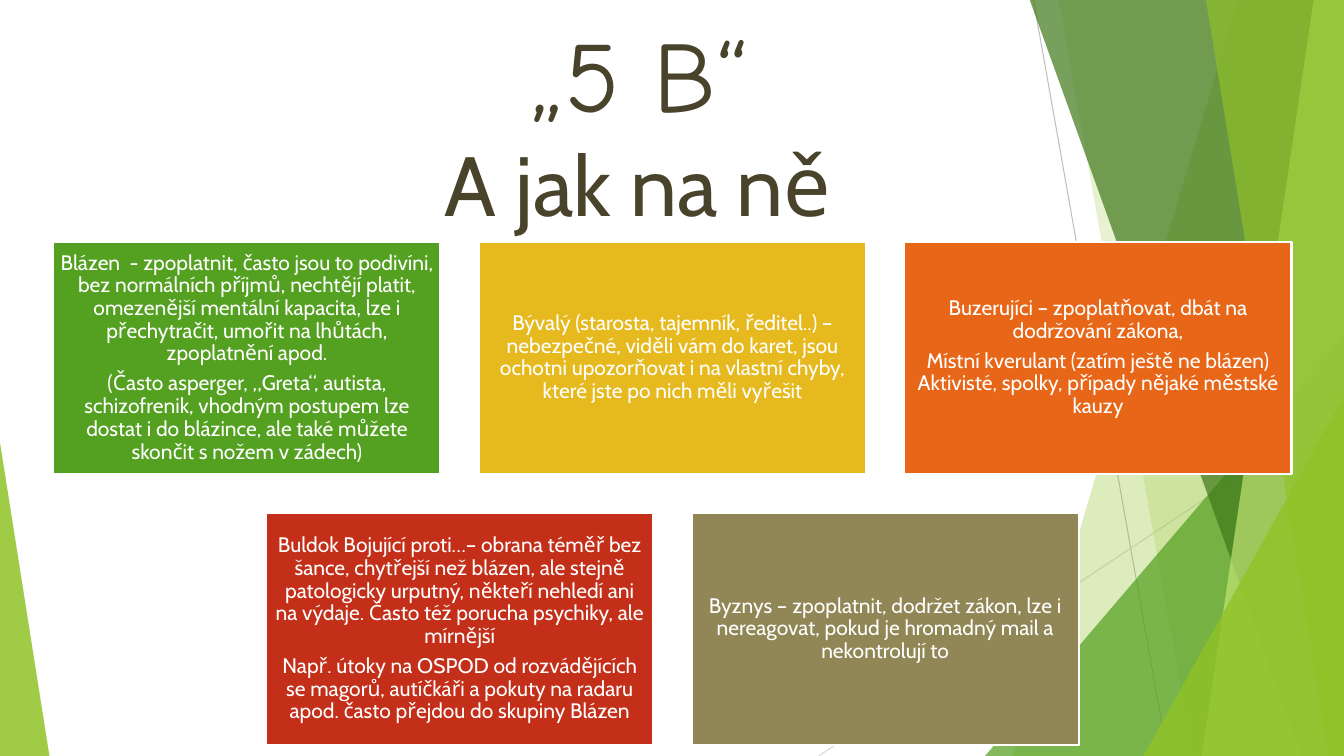
from dataclasses import dataclass

from lxml import etree
from pptx import Presentation
from pptx.dml.color import RGBColor
from pptx.enum.shapes import MSO_CONNECTOR, MSO_SHAPE
from pptx.enum.text import MSO_ANCHOR, PP_ALIGN
from pptx.oxml.ns import qn
from pptx.util import Pt

PX = 9144
SLIDE_W, SLIDE_H = 1333, 750
RECT, TRIANGLE = MSO_SHAPE.RECTANGLE, MSO_SHAPE.ISOSCELES_TRIANGLE
STRAIGHT = MSO_CONNECTOR.STRAIGHT
CENTER, MIDDLE, TOP = PP_ALIGN.CENTER, MSO_ANCHOR.MIDDLE, MSO_ANCHOR.TOP


@dataclass(frozen=True)
class Theme:
    white: str = "FFFFFF"
    title: str = "48432A"
    lime: str = "90C226"
    green: str = "54A021"
    forest: str = "3F7819"
    pale: str = "C0E474"
    yellow: str = "E6B91E"
    orange: str = "E76618"
    red: str = "C42F1A"
    olive: str = "918655"
    body_font: str = "Cabin"
    hand_font: str = "Comic Neue"
    hand_size: int = 72
    title_size: int = 60
    body_size: int = 15


THEME = Theme()


@dataclass(frozen=True)
class Ray:
    x1: int
    y1: int
    x2: int
    y2: int
    color: str


@dataclass(frozen=True)
class Band:
    top_x: int
    bottom_x: int
    color: str
    alpha: int


@dataclass(frozen=True)
class Wedge:
    x: int
    y: int
    w: int
    h: int
    apex: int
    color: str
    alpha: int


@dataclass(frozen=True)
class Card:
    color: str
    paragraphs: tuple[str, ...]


RAYS = (
    Ray(1025, 0, 1158, 750, "BFBFBF"),
    Ray(1333, 403, 812, 750, "D9D9D9"),
)
FACETS = (
    Band(1228, 1004, THEME.lime, 30),
    Band(1050, 1183, THEME.lime, 20),
    Wedge(977, 333, 356, 417, 1, THEME.green, 72),
    Band(1021, 1291, THEME.forest, 70),
    Band(1303, 1192, THEME.pale, 70),
    Band(1196, 1318, THEME.lime, 65),
    Wedge(1134, 393, 199, 357, 1, THEME.lime, 80),
    Wedge(0, 439, 49, 311, 0, THEME.lime, 85),
)
CARD_W, CARD_H = 384, 230
PITCH_X, PITCH_Y = 422, 269
GRID_X, GRID_Y = 53, 240
CARD_ROWS = (
    (
        Card(THEME.green, (
            "Blázen  - zpoplatnit, často jsou to podivíni, bez normálních příjmů, "
            "nechtějí platit, omezenější mentální kapacita, lze i přechytračit, "
            "umořit na lhůtách, zpoplatnění apod.",
            "(Často asperger, „Greta“, autista, schizofrenik, vhodným postupem lze "
            "dostat i do blázince, ale také můžete skončit s nožem v zádech)",
        )),
        Card(THEME.yellow, (
            "Bývalý (starosta, tajemník, ředitel..) – nebezpečné, viděli vám do "
            "karet, jsou ochotni upozorňovat i na vlastní chyby, které jste po "
            "nich měli vyřešit",
        )),
        Card(THEME.orange, (
            "Buzerujíci – zpoplatňovat, dbát na dodržování zákona,",
            "Místní kverulant (zatím ještě ne blázen) Aktivisté, spolky, případy "
            "nějaké městské kauzy",
        )),
    ),
    (
        Card(THEME.red, (
            "Buldok Bojující proti…– obrana téměř bez šance, chytřejší než blázen, "
            "ale stejně patologicky urputný, někteří nehledí ani na výdaje. Často "
            "též porucha psychiky, ale mírnější",
            "Např. útoky na OSPOD od rozvádějících se magorů, autíčkáři a pokuty "
            "na radaru apod. často přejdou do skupiny Blázen",
        )),
        Card(THEME.olive, (
            "Byznys – zpoplatnit, dodržet zákon, lze i nereagovat, pokud je "
            "hromadný mail a nekontrolují to",
        )),
    ),
)


def set_font(font, name: str, size: int, color: str) -> None:
    font.name, font.size = name, Pt(size)
    font.color.rgb = RGBColor.from_string(color)


def set_fill(sp, color: str) -> None:
    sp.shadow.inherit = False
    sp.fill.solid()
    sp.fill.fore_color.rgb = RGBColor.from_string(color)


def draw_ray(s, ray: Ray) -> None:
    sp = s.shapes.add_connector(
        STRAIGHT, ray.x1 * PX, ray.y1 * PX, ray.x2 * PX, ray.y2 * PX)
    sp.line.color.rgb = RGBColor.from_string(ray.color)
    sp.line.width = Pt(0.75)
    etree.SubElement(sp._element.spPr, qn("a:effectLst"))


def draw_facet(s, facet: Band | Wedge) -> None:
    if isinstance(facet, Band):
        builder = s.shapes.build_freeform(facet.top_x, -1, scale=PX)
        builder.add_line_segments(
            [(SLIDE_W, -1), (SLIDE_W, SLIDE_H), (facet.bottom_x, SLIDE_H)])
        sp = builder.convert_to_shape()
    else:
        sp = s.shapes.add_shape(
            TRIANGLE, facet.x * PX, facet.y * PX, facet.w * PX, facet.h * PX)
        sp.adjustments[0] = facet.apex
    set_fill(sp, facet.color)
    sp.line.fill.background()
    color = sp._element.spPr.find(qn("a:solidFill"))[0]
    etree.SubElement(color, qn("a:alpha"), val=str(facet.alpha * 1000))


def draw_title(s) -> None:
    sp = s.shapes.add_textbox(74 * PX, 7 * PX, 1117 * PX, 150 * PX)
    tf = sp.text_frame
    tf.word_wrap, tf.vertical_anchor = True, TOP
    p = tf.paragraphs[0]
    p.alignment = CENTER
    r = p.add_run()
    r.text = "„5 B“"
    set_font(r.font, THEME.hand_font, THEME.hand_size, THEME.title)
    p.add_line_break()
    r = p.add_run()
    r.text = "A jak na ně"
    set_font(r.font, THEME.body_font, THEME.title_size, THEME.title)


def draw_card(s, card: Card, x: int, y: int) -> None:
    sp = s.shapes.add_shape(RECT, x * PX, y * PX, CARD_W * PX, CARD_H * PX)
    set_fill(sp, card.color)
    sp.line.color.rgb = RGBColor.from_string(THEME.white)
    sp.line.width = Pt(1.5)
    tf = sp.text_frame
    tf.word_wrap, tf.vertical_anchor = True, MIDDLE
    tf.margin_left = tf.margin_right = tf.margin_top = tf.margin_bottom = 6 * PX
    for i, text in enumerate(card.paragraphs):
        p = tf.add_paragraph() if i else tf.paragraphs[0]
        p.text = text
        p.alignment, p.line_spacing, p.space_after = CENTER, 0.9, Pt(5.25)
        set_font(p.font, THEME.body_font, THEME.body_size, THEME.white)


def main() -> None:
    prs = Presentation()
    prs.slide_width, prs.slide_height = SLIDE_W * PX, SLIDE_H * PX
    s = prs.slides.add_slide(prs.slide_layouts[6])
    for ray in RAYS:
        draw_ray(s, ray)
    for facet in FACETS:
        draw_facet(s, facet)
    draw_title(s)
    for row, cards in enumerate(CARD_ROWS):
        for col, card in enumerate(cards):
            x = GRID_X + col * PITCH_X + row * PITCH_X // 2
            draw_card(s, card, x, GRID_Y + row * PITCH_Y)
    prs.save("out.pptx")


if __name__ == "__main__":
    main()
